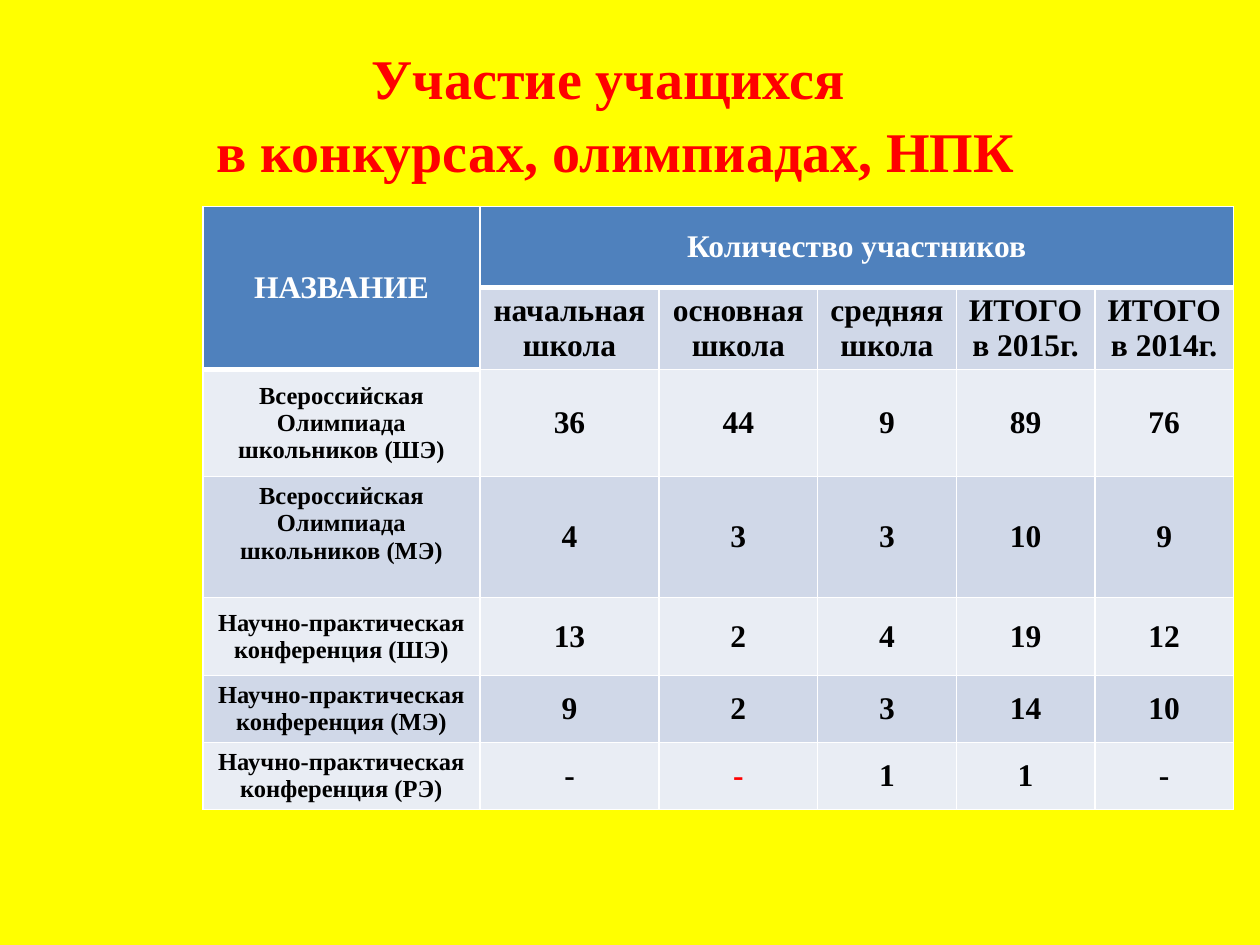
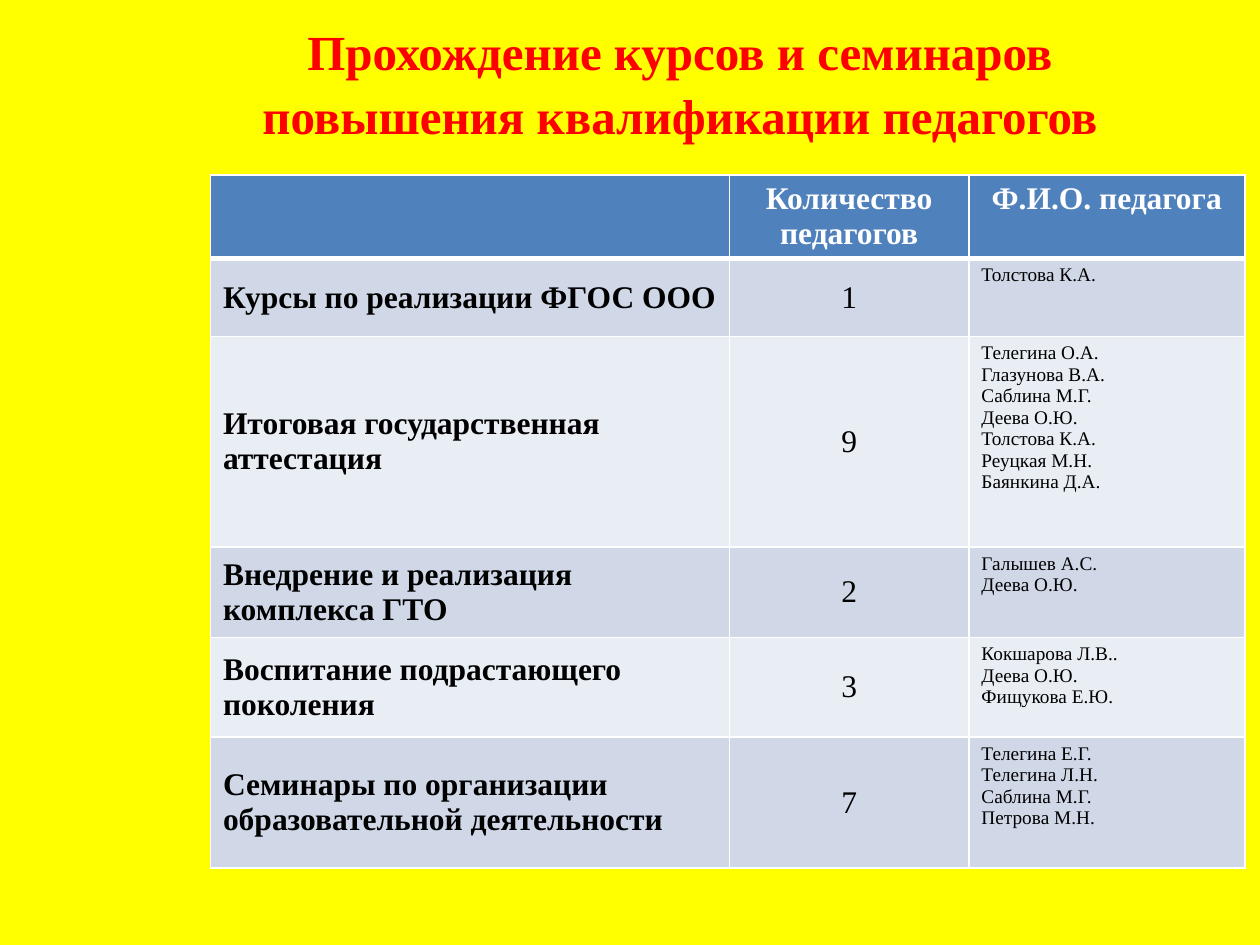
from lxml import etree
from pptx import Presentation
from pptx.dml.color import RGBColor
from pptx.enum.text import MSO_ANCHOR, MSO_AUTO_SIZE, PP_ALIGN
from pptx.oxml.ns import qn
from pptx.util import Inches, Pt

UNIT = Inches(0.1)
TITLE_ONLY = 5
FONT = "Times New Roman"
LEFT, CENTER = PP_ALIGN.LEFT, PP_ALIGN.CENTER
TOP, MIDDLE = MSO_ANCHOR.TOP, MSO_ANCHOR.MIDDLE
NO_AUTOFIT = MSO_AUTO_SIZE.NONE

YELLOW = RGBColor(0xFF, 0xFF, 0x00)
RED = RGBColor(0xFF, 0x00, 0x00)
WHITE = RGBColor(0xFF, 0xFF, 0xFF)
BLACK = RGBColor(0x00, 0x00, 0x00)
BLUE = RGBColor(0x4F, 0x81, 0xBD)
DARK_BAND = RGBColor(0xD0, 0xD8, 0xE8)
LIGHT_BAND = RGBColor(0xE9, 0xED, 0xF4)

HEAD = dict(size=18, bold=True, color=WHITE, align=CENTER, anchor=MIDDLE)
TOP_HEAD = dict(HEAD, anchor=TOP)
VALUE = dict(HEAD, color=BLACK)
EVENT = dict(VALUE, size=14)
COURSE = dict(VALUE, align=LEFT)
COUNT = dict(VALUE, bold=False)
NAMES = dict(COUNT, size=11, align=LEFT, anchor=TOP)

CONTESTS = [
    ("Всероссийская Олимпиада школьников (ШЭ)", "36", "44", "9", "89", "76"),
    ("Всероссийская Олимпиада школьников (МЭ)", "4", "3", "3", "10", "9"),
    ("Научно-практическая конференция (ШЭ)", "13", "2", "4", "19", "12"),
    ("Научно-практическая конференция (МЭ)", "9", "2", "3", "14", "10"),
    ("Научно-практическая конференция (РЭ)", "-", "-", "1", "1", "-"),
]
SCHOOLS = ["начальная школа", "основная школа", "средняя школа",
           "ИТОГО в 2015г.", "ИТОГО в 2014г."]
COURSES = [
    ("Курсы по реализации ФГОС ООО", "1", "Толстова К.А."),
    ("Итоговая государственная аттестация", "9",
     "Телегина О.А.\nГлазунова В.А.\nСаблина М.Г.\nДеева О.Ю.\n"
     "Толстова К.А.\nРеуцкая М.Н.\nБаянкина Д.А."),
    ("Внедрение и реализация комплекса ГТО", "2",
     "Галышев А.С.\nДеева О.Ю."),
    ("Воспитание подрастающего поколения", "3",
     "Кокшарова Л.В..\nДеева О.Ю.\nФищукова Е.Ю."),
    ("Семинары по организации образовательной деятельности", "7",
     "Телегина Е.Г.\nТелегина Л.Н.\nСаблина М.Г.\nПетрова М.Н."),
]


def set_font(font, size, bold, color):
    """Apply the shared typeface with the given size, weight and colour."""
    for name, value in dict(name=FONT, size=Pt(size), bold=bold).items():
        setattr(font, name, value)
    font.color.rgb = color


def add_titled_slide(prs, text, box, size):
    """Add a slide whose red title fills the box, given in grid units."""
    s = prs.slides.add_slide(prs.slide_layouts[TITLE_ONLY])
    sp = s.shapes.title
    for name, value in zip(("left", "top", "width", "height"), box):
        setattr(sp, name, int(value * UNIT))
    tf = sp.text_frame
    tf.text = text
    for name, value in dict(word_wrap=True, auto_size=NO_AUTOFIT,
                            vertical_anchor=MIDDLE).items():
        setattr(tf, name, value)
    p = tf.paragraphs[0]
    p.alignment, p.line_spacing = CENTER, 1.09
    for r in p.runs:
        set_font(r.font, size, True, RED)
    return s


def add_grid(s, box, columns, rows):
    """Add a table that shares the box out by column and row weights."""
    x, y, w, h = (int(value * UNIT) for value in box)
    table = s.shapes.add_table(len(rows), len(columns), x, y, w, h).table
    for column, weight in zip(table.columns, columns):
        column.width = int(w * weight / sum(columns))
    for row, weight in zip(table.rows, rows):
        row.height = int(h * weight / sum(rows))
    return table


def set_borders(cell, bottom):
    """Draw white lines around a cell with its own bottom width."""
    tc_pr = cell._tc.get_or_add_tcPr()
    for side, width in dict(lnL=1, lnR=1, lnT=1, lnB=bottom).items():
        line = etree.SubElement(tc_pr, qn(f"a:{side}"), w=str(Pt(width)))
        fill = etree.SubElement(line, qn("a:solidFill"))
        etree.SubElement(fill, qn("a:srgbClr"), val=str(WHITE))


def fill_cell(cell, text, fill, style):
    """Write a cell's lines over its fill in the given text style."""
    set_borders(cell, 3 if fill == BLUE else 1)
    cell.fill.solid()
    cell.fill.fore_color.rgb = fill
    cell.vertical_anchor = style["anchor"]
    cell.text_frame.text = text
    for p in cell.text_frame.paragraphs:
        p.alignment = style["align"]
        set_font(p.font, style["size"], style["bold"], style["color"])
        for r in p.runs:
            set_font(r.font, style["size"], style["bold"], style["color"])


def fill_body(table, first_row, records, styles, bands):
    """Fill the records below the header in alternating bands."""
    for i, record in enumerate(records):
        for j, (text, style) in enumerate(zip(record, styles)):
            fill_cell(table.cell(first_row + i, j), text, bands[i % 2], style)


def add_contests(prs):
    """Build the slide of pupils taking part in contests."""
    s = add_titled_slide(prs, "Участие учащихся \vв конкурсах, олимпиадах, НПК",
                         (15.4, 4.5, 66.9, 8.5), 32)
    table = add_grid(s, (16.1, 16.4, 81.8, 47.8),
                     [2.2, 1.42, 1.26, 1.1, 1.1, 1.1],
                     [0.64, 0.65, 0.85, 0.96, 0.62, 0.53, 0.53])
    for j in range(6):
        fill_cell(table.cell(0, j), "", BLUE, HEAD)
    fill_cell(table.cell(1, 0), "", BLUE, HEAD)
    for j, school in enumerate(SCHOOLS, 1):
        fill_cell(table.cell(1, j), school, DARK_BAND, VALUE)
    for start, end, text in [((0, 0), (1, 0), "НАЗВАНИЕ"),
                             ((0, 1), (0, 5), "Количество участников")]:
        cell = table.cell(*start)
        cell.merge(table.cell(*end))
        p = cell.text_frame.paragraphs[0]
        r = p.add_run()
        r.text = text
        set_font(r.font, HEAD["size"], HEAD["bold"], HEAD["color"])
    fill_body(table, 2, CONTESTS, [EVENT] + [VALUE] * 5,
              (LIGHT_BAND, DARK_BAND))
    table.cell(3, 0).vertical_anchor = TOP
    table.cell(6, 2).text_frame.paragraphs[0].runs[0].font.color.rgb = RED


def add_courses(prs):
    """Build the slide of courses and seminars taken by teachers."""
    s = add_titled_slide(
        prs, "Прохождение курсов и семинаров повышения квалификации педагогов",
        (18.5, 1.3, 70.9, 10.2), 28)
    table = add_grid(s, (16.7, 13.9, 82.1, 55), [4.12, 1.9, 2.19],
                     [0.66, 0.62, 1.67, 0.72, 0.79, 1.04])
    for j, text in enumerate(["", "Количество педагогов", "Ф.И.О. педагога"]):
        fill_cell(table.cell(0, j), text, BLUE, TOP_HEAD)
    fill_body(table, 1, COURSES, [COURSE, COUNT, NAMES],
              (DARK_BAND, LIGHT_BAND))


def main():
    """Build and save the presentation."""
    prs = Presentation()
    prs.slide_width, prs.slide_height = 100 * UNIT, 75 * UNIT
    fill = prs.slide_master.background.fill
    fill.solid()
    fill.fore_color.rgb = YELLOW
    add_contests(prs)
    add_courses(prs)
    prs.save("out.pptx")


if __name__ == "__main__":
    main()
